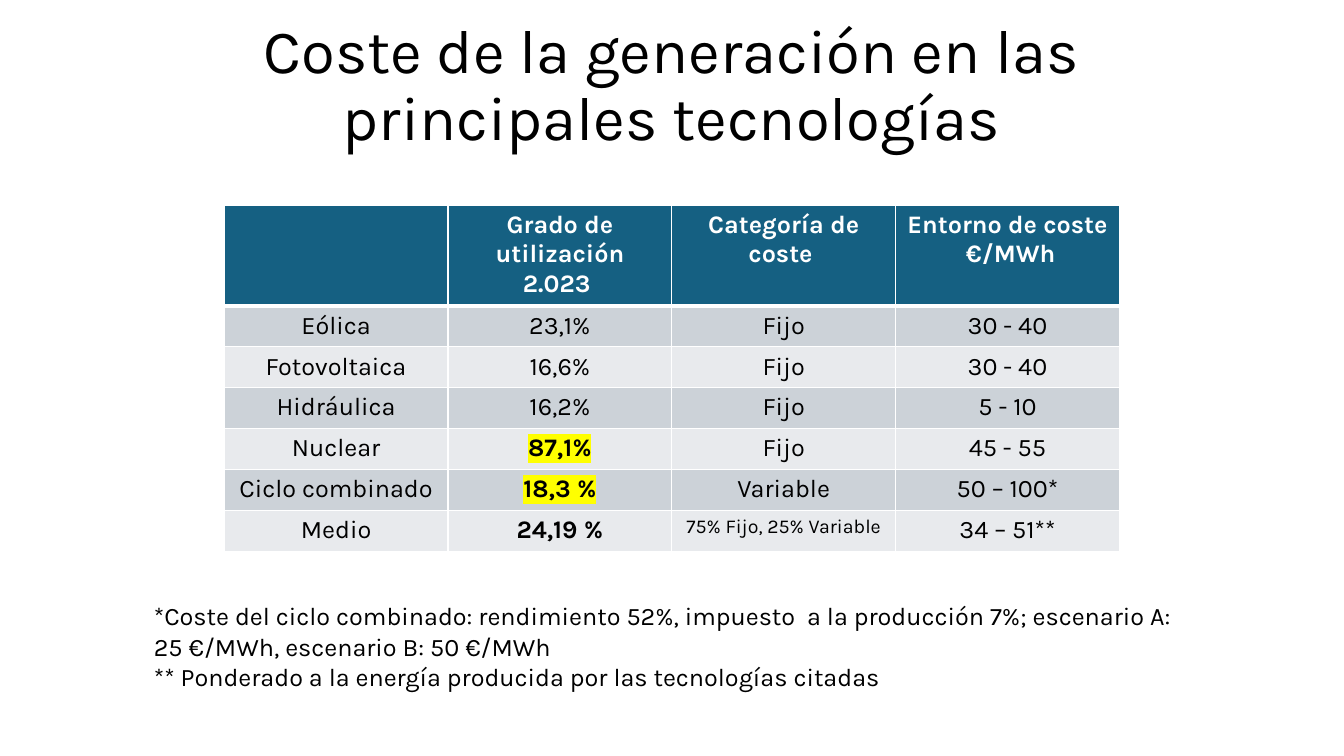
from lxml import etree
from pptx import Presentation
from pptx.dml.color import RGBColor
from pptx.enum import text
from pptx.oxml import ns
from pptx.util import Cm, Pt

TITLE = "Coste de la generación en las principales tecnologías"
HEADERS = [
    [],
    ["Grado de utilización", "2.023 "],
    ["Categoría de coste "],
    ["Entorno de coste  €/MWh"],
]
ROWS = [
    ("Eólica", "23,1%", "Fijo", "30 - 40"),
    ("Fotovoltaica", "16,6%", "Fijo", "30 - 40"),
    ("Hidráulica", "16,2%", "Fijo", "5 - 10"),
    ("Nuclear", "87,1%", "Fijo", "45 - 55"),
    ("Ciclo combinado", "18,3 %", "Variable", "50 – 100*"),
    ("Medio", "24,19 %", "75% Fijo, 25% Variable", "34 – 51**"),
]
NOTES = [
    "*Coste del ciclo combinado: rendimiento 52%, impuesto  a la producción 7%; "
    "escenario A: 25 €/MWh, escenario B: 50 €/MWh",
    "** Ponderado a la energía producida por las tecnologías citadas",
]
BOLD = {"87,1%", "18,3 %", "24,19 %"}
HIGHLIGHTED = {"87,1%", "18,3 %"}
SMALL = {"75% Fijo, 25% Variable"}

FONT = "Karla"
BLACK, WHITE, YELLOW = "000000", "FFFFFF", "FFFF00"
HEADER_FILL = "156082"
BAND_FILLS = ["CCD2D8", "E8EAED"]
COLUMN_WIDTH, HEADER_HEIGHT, ROW_HEIGHT = Cm(5.64), Cm(2.47), Cm(1.03)


def color(hex_value):
    return RGBColor.from_string(hex_value)


def write(frame, lines, size=18, ink=BLACK, bold=False, align=None, highlight=None):
    """Write one paragraph per line and return the paragraphs."""
    for number, line in enumerate(lines):
        para = frame.add_paragraph() if number else frame.paragraphs[0]
        para.alignment = align
        span = para.add_run()
        span.text = line
        span.font.size = Pt(size)
        span.font.bold = bold
        span.font.color.rgb = color(ink)
        if highlight:
            mark = etree.SubElement(span.font._element, ns.qn("a:highlight"))
            etree.SubElement(mark, ns.qn("a:srgbClr"), val=highlight)
        span.font.name = FONT
    return frame.paragraphs


def style_cell(cell, fill, bottom=1):
    """Fill the cell and draw white borders; bottom is in points."""
    cell.fill.solid()
    cell.fill.fore_color.rgb = color(fill)
    properties = cell._tc.get_or_add_tcPr()
    widths = {"a:lnL": 1, "a:lnR": 1, "a:lnT": 1, "a:lnB": bottom}
    for place, (tag, width) in enumerate(widths.items()):
        line = etree.Element(ns.qn(tag), w=str(Pt(width)))
        paint = etree.SubElement(line, ns.qn("a:solidFill"))
        etree.SubElement(paint, ns.qn("a:srgbClr"), val=WHITE)
        properties.insert(place, line)


def add_text(page, lines, left, top, width, height, **style):
    frame = page.shapes.add_textbox(Cm(left), Cm(top), Cm(width), Cm(height)).text_frame
    frame.word_wrap = True
    write(frame, lines, **style)
    return frame


def add_costs(page):
    count = len(ROWS) + 1
    table = page.shapes.add_table(
        count, len(HEADERS), Cm(5.65), Cm(5.17),
        COLUMN_WIDTH * len(HEADERS), HEADER_HEIGHT + ROW_HEIGHT * len(ROWS),
    ).table
    for column in table.columns:
        column.width = COLUMN_WIDTH
    for index, row in enumerate(table.rows):
        row.height = ROW_HEIGHT if index else HEADER_HEIGHT

    center = text.PP_ALIGN.CENTER
    for column, lines in enumerate(HEADERS):
        cell = table.cell(0, column)
        style_cell(cell, HEADER_FILL, bottom=3)
        write(cell.text_frame, lines, ink=WHITE, bold=True, align=center)
    for index, values in enumerate(ROWS):
        for column, value in enumerate(values):
            cell = table.cell(index + 1, column)
            style_cell(cell, BAND_FILLS[index % 2])
            write(
                cell.text_frame, [value], size=14 if value in SMALL else 18,
                bold=value in BOLD, align=center,
                highlight=YELLOW if value in HIGHLIGHTED else None,
            )


def main():
    deck = Presentation()
    deck.slide_width, deck.slide_height = Cm(33.87), Cm(19.05)
    page = deck.slides.add_slide(deck.slide_layouts[6])
    title = add_text(page, [TITLE], 2.33, 0.36, 29.21, 3.68,
                     size=44, align=text.PP_ALIGN.CENTER)
    title.vertical_anchor = text.MSO_ANCHOR.MIDDLE
    title.paragraphs[0].line_spacing = 0.9
    add_costs(page)
    add_text(page, NOTES, 3.63, 15.01, 26.6, 2.57)
    deck.save("out.pptx")


if __name__ == "__main__":
    main()
